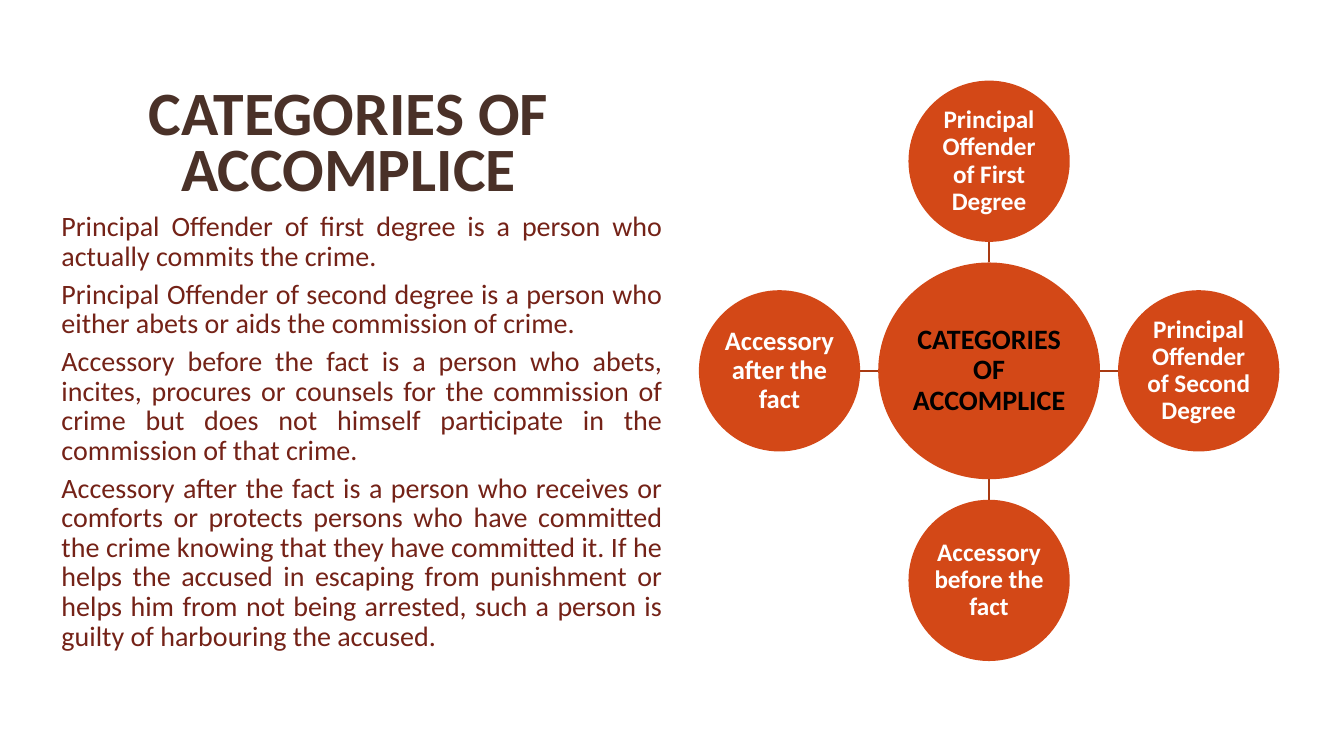
"""Build a slide that defines the categories of accomplice beside a radial diagram."""
import dataclasses

import lxml.etree
import pptx
import pptx.dml.color
import pptx.enum.shapes
import pptx.enum.text
import pptx.oxml.ns
import pptx.util

ALIGN = pptx.enum.text.PP_ALIGN
ANCHOR = pptx.enum.text.MSO_ANCHOR
RGB = pptx.dml.color.RGBColor
COLUMNS, ROWS = 160, 90


@dataclasses.dataclass(frozen=True)
class Theme:
    font: str = "Calibri"
    title: RGB = RGB(0x4A, 0x31, 0x28)
    body: RGB = RGB(0x74, 0x22, 0x17)
    circle: RGB = RGB(0xD3, 0x48, 0x17)
    spoke: RGB = RGB(0xA9, 0x3A, 0x12)
    hub_text: RGB = RGB(0, 0, 0)
    label: RGB = RGB(0xFF, 0xFF, 0xFF)
    title_size: int = 44
    body_size: int = 20
    hub_size: int = 20
    label_size: int = 18
    large_label_size: int = 19


def apply(target, formats):
    for name, value in formats.items():
        setattr(target, name, value)


class SlideBuilder:
    def __init__(self, deck, theme):
        self.theme = theme
        self.page = deck.slides.add_slide(deck.slide_layouts[6])
        self.column = deck.slide_width / COLUMNS
        self.row = deck.slide_height / ROWS

    def place(self, *cells):
        units = (self.column, self.row) * 2
        return [round(cell * unit) for cell, unit in zip(cells, units)]

    def fill_text(self, shape, texts, size, color, frame_format, para_format, bold=True, gap=0):
        frame = shape.text_frame
        apply(frame, {"word_wrap": True, **frame_format})
        for index, text in enumerate(texts):
            para = frame.paragraphs[0] if index == 0 else frame.add_paragraph()
            apply(para, {**para_format, "space_before": pptx.util.Pt(gap if index else 0)})
            span = para.add_run()
            span.text = text
            apply(span.font, {"name": self.theme.font, "size": pptx.util.Pt(size), "bold": bold})
            span.font.color.rgb = color

    def text(self, cells, texts, size, color, frame_format, para_format, **options):
        box = self.page.shapes.add_textbox(*self.place(*cells))
        self.fill_text(box, texts, size, color, frame_format, para_format, **options)

    def circle(self, x, y, width, height, text, size, color):
        cells = self.place(x - width / 2, y - height / 2, width, height)
        shape = self.page.shapes.add_shape(pptx.enum.shapes.MSO_SHAPE.OVAL, *cells)
        shape.shadow.inherit = False
        shape.fill.solid()
        shape.fill.fore_color.rgb = self.theme.circle
        shape.line.fill.background()
        sides = ("left", "right", "top", "bottom")
        margins = {f"margin_{side}": pptx.util.Inches(0.01) for side in sides}
        self.fill_text(shape, [text], size, color,
                       {"vertical_anchor": ANCHOR.MIDDLE, **margins},
                       {"alignment": ALIGN.CENTER, "line_spacing": 0.9})

    def spoke(self, *cells):
        line = self.page.shapes.add_connector(
            pptx.enum.shapes.MSO_CONNECTOR.STRAIGHT, *self.place(*cells))
        line.line.color.rgb = self.theme.spoke
        line.line.width = pptx.util.Pt(1)
        properties = line._element.spPr
        lxml.etree.SubElement(properties, pptx.oxml.ns.qn("a:effectLst"))


def main():
    deck = pptx.Presentation()
    deck.slide_width = pptx.util.Inches(13.33)
    deck.slide_height = pptx.util.Inches(7.5)
    theme = Theme()
    slide = SlideBuilder(deck, theme)

    heading = "CATEGORIES OF ACCOMPLICE"
    slide.text((6, 8, 71, 16.85), [heading], theme.title_size, theme.title,
               {"vertical_anchor": ANCHOR.BOTTOM},
               {"alignment": ALIGN.CENTER, "line_spacing": pptx.util.Pt(40)})

    definitions = [
        "Principal Offender of first degree is a person who actually commits the crime.",
        "Principal Offender of second degree is a person who either abets or aids the "
        "commission of crime.",
        "Accessory before the fact is a person who abets, incites, procures or counsels for "
        "the commission of crime but does not himself participate in the commission of that "
        "crime.",
        "Accessory after the fact is a person who receives or comforts or protects persons "
        "who have committed the crime knowing that they have committed it. If he helps the "
        "accused in escaping from punishment or helps him from not being arrested, such a "
        "person is guilty of harbouring the accused.",
    ]
    slide.text((2.4, 24.75, 77.65, 57.25), definitions, theme.body_size, theme.body,
               {"margin_left": pptx.util.Inches(0.41)},
               {"alignment": ALIGN.JUSTIFY, "line_spacing": 0.88}, bold=False, gap=6)

    center_x, center_y = 117.75, 44.15
    hub_width, hub_height, satellite, orbit = 26.4, 25.8, 19.2, 24.95
    slide.circle(center_x, center_y, hub_width, hub_height, heading,
                 theme.hub_size, theme.hub_text)
    satellites = [
        (0, -1, "Principal Offender of First Degree", theme.label_size),
        (1, 0, "Principal Offender of Second Degree", theme.label_size),
        (0, 1, "Accessory before the fact", theme.label_size),
        (-1, 0, "Accessory after the fact", theme.large_label_size),
    ]
    reach = orbit - satellite / 2
    for across, down, label, size in satellites:
        slide.spoke(center_x + across * hub_width / 2, center_y + down * hub_height / 2,
                    center_x + across * reach, center_y + down * reach)
        slide.circle(center_x + across * orbit, center_y + down * orbit,
                     satellite, satellite, label, size, theme.label)

    deck.save("out.pptx")


if __name__ == "__main__":
    main()
